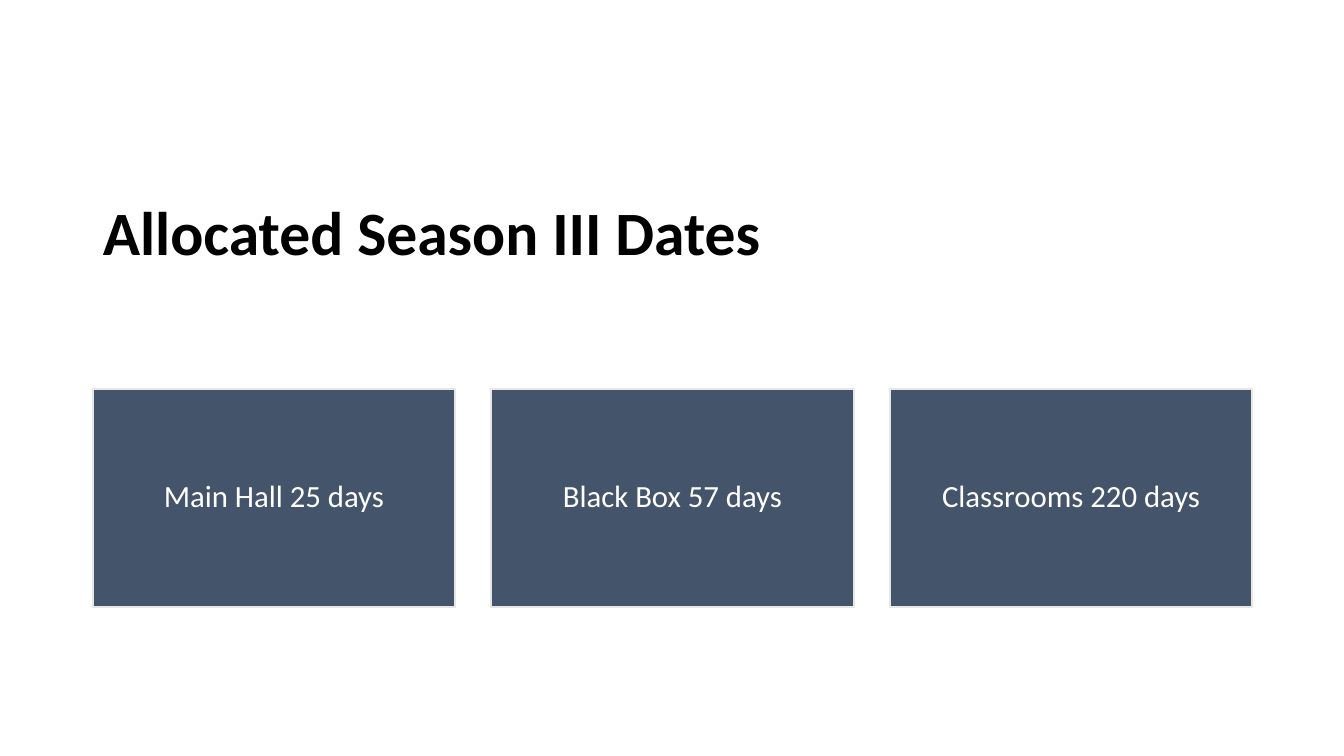
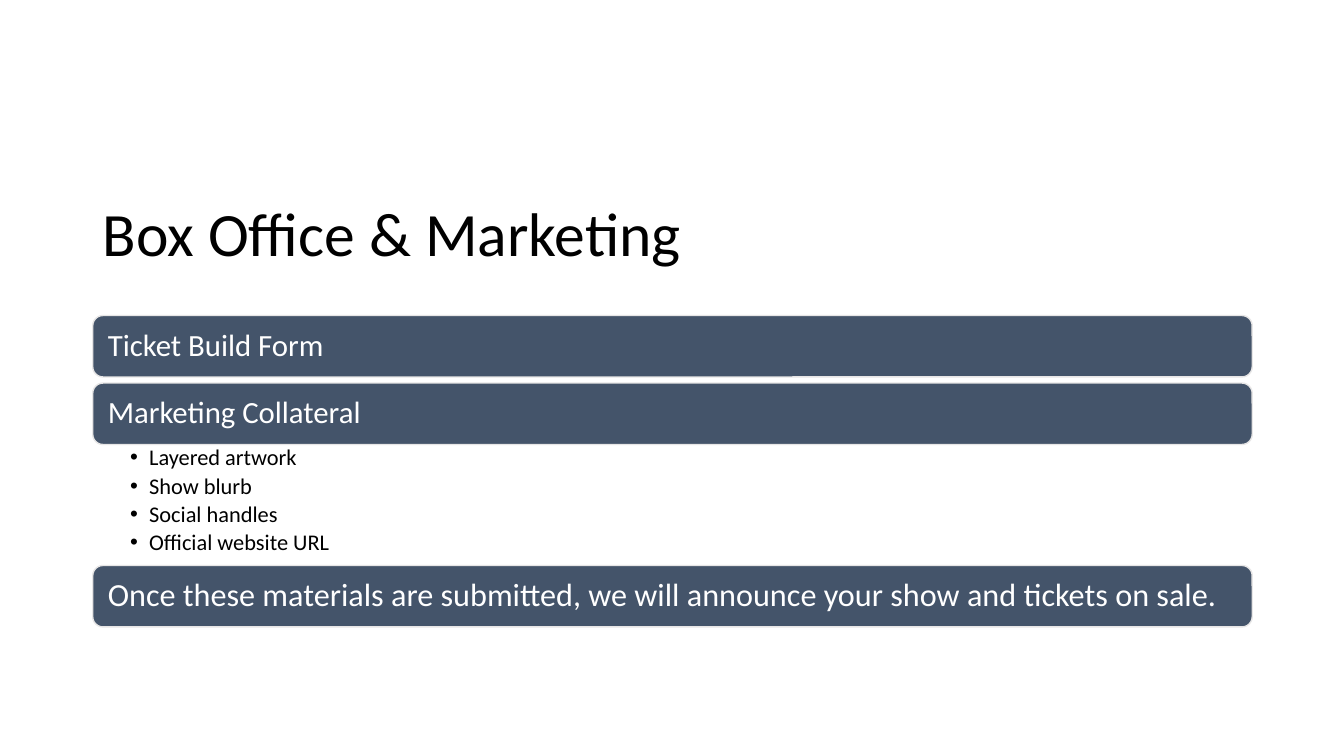
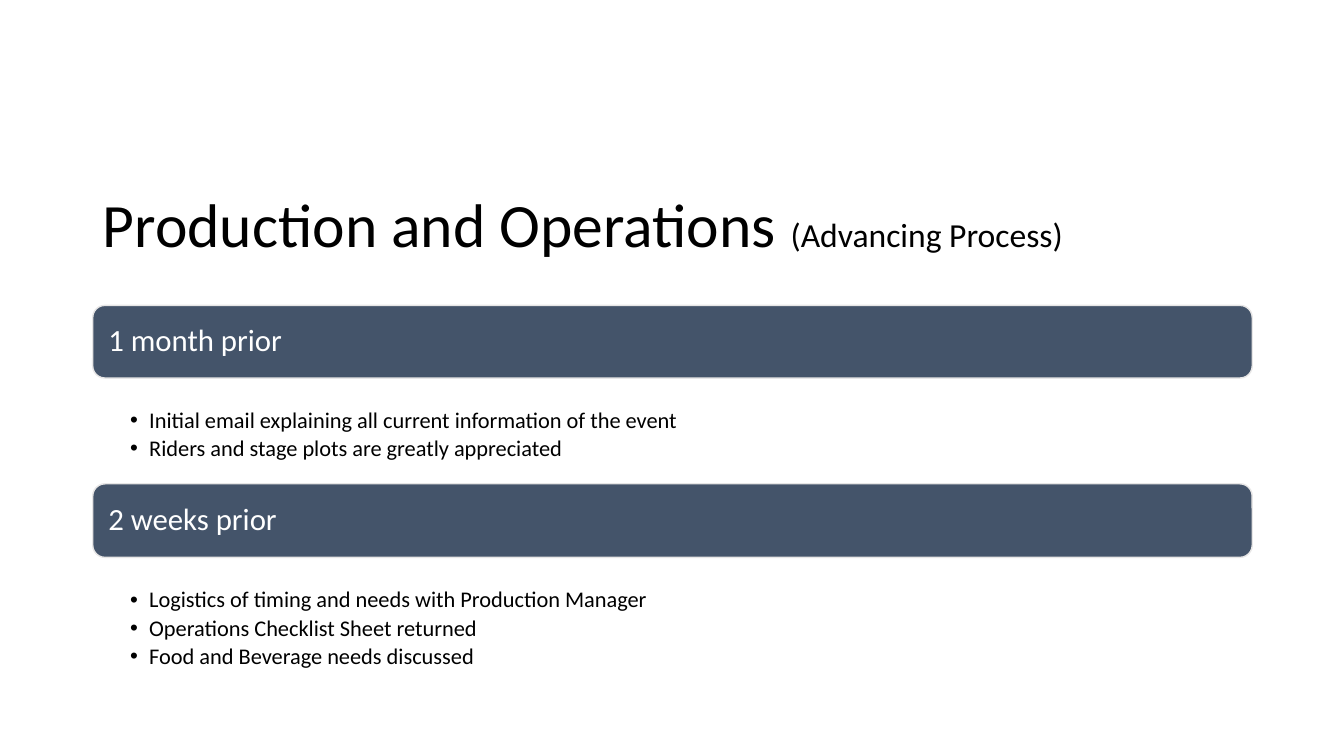
from lxml import etree
from pptx import Presentation
from pptx.dml.color import RGBColor
from pptx.enum.shapes import MSO_SHAPE
from pptx.enum.text import MSO_ANCHOR, MSO_AUTO_SIZE, PP_ALIGN
from pptx.oxml.ns import qn
from pptx.util import Inches, Pt

RECT, ROUND = MSO_SHAPE.RECTANGLE, MSO_SHAPE.ROUNDED_RECTANGLE
TOP, MIDDLE = MSO_ANCHOR.TOP, MSO_ANCHOR.MIDDLE
LEFT, CENTER = PP_ALIGN.LEFT, PP_ALIGN.CENTER
FIXED = MSO_AUTO_SIZE.NONE

SLATE = RGBColor(0x44, 0x54, 0x6A)
PALE = RGBColor(0xE7, 0xE6, 0xE6)
WHITE = RGBColor(0xFF, 0xFF, 0xFF)
BLACK = RGBColor(0, 0, 0)

FONT = "Calibri"
COLS = 12
COL = 11.5 / COLS
ROW = 0.1
EDGE = 0.92


class Deck:
    """Hold the shared style and the current slide."""

    def __init__(self):
        self.deck = Presentation()
        self.deck.slide_width = Inches(13.33)
        self.deck.slide_height = Inches(7.5)

    def place(self, col, row, cols, rows):
        return (Inches(EDGE + col * COL), Inches(row * ROW),
                Inches(cols * COL), Inches(rows * ROW))

    def setup(self, shape, anchor, pads):
        frame = shape.text_frame
        frame.word_wrap = True
        frame.auto_size = FIXED
        frame.vertical_anchor = anchor
        (frame.margin_left, frame.margin_top,
         frame.margin_right, frame.margin_bottom) = map(Inches, pads)
        return frame

    def style(self, para, size, color, align=LEFT, bold=False):
        para.alignment = align
        para.line_spacing = 0.9
        font = para.font
        font.name, font.size, font.bold = FONT, Pt(size), bold
        font.color.rgb = color

    def title(self, text, row, bold=False, tail=""):
        self.slide = self.deck.slides.add_slide(self.deck.slide_layouts[5])
        shape = self.slide.shapes.title
        shape.left, shape.top, shape.width, shape.height = self.place(
            0, row, COLS, 9.6)
        para = self.setup(shape, MIDDLE, (0.1, 0.05, 0.1, 0.05)).paragraphs[0]
        para.text = text
        self.style(para, 44, BLACK, bold=bold)
        if tail:
            run = para.add_run()
            run.text = tail
            run.font.size = Pt(24)

    def block(self, kind, area, text, size, align, edge, pad):
        shape = self.slide.shapes.add_shape(kind, *self.place(*area))
        shape.shadow.inherit = False
        shape.fill.solid()
        shape.fill.fore_color.rgb = SLATE
        shape.line.color.rgb = PALE
        shape.line.width = Pt(edge)
        para = self.setup(shape, MIDDLE, (pad, 0.09, pad, 0.09)).paragraphs[0]
        para.text = text
        self.style(para, size, WHITE, align)

    def cards(self, row, rows, texts):
        gap = 0.1
        cols = COLS / (len(texts) + gap * (len(texts) - 1))
        for i, text in enumerate(texts):
            area = (i * cols * (1 + gap), row, cols, rows)
            self.block(RECT, area, text, 22, CENTER, 1.5, 0.09)

    def bar(self, row, rows, text, size=22):
        self.block(ROUND, (0, row, COLS, rows), text, size, LEFT, 1, 0.12)

    def items(self, row, rows, texts, top=0.02):
        box = self.slide.shapes.add_textbox(*self.place(0, row, COLS, rows))
        frame = self.setup(box, TOP, (0.37, top, 0.12, 0.02))
        for i, text in enumerate(texts):
            para = frame.add_paragraph() if i else frame.paragraphs[0]
            para.text = text
            props = para._p.get_or_add_pPr()
            props.set("marL", str(Inches(0.19)))
            props.set("indent", str(-Inches(0.19)))
            etree.SubElement(props, qn("a:buFont")).set("typeface", "Arial")
            etree.SubElement(props, qn("a:buChar")).set("char", "•")
            para.space_after = Pt(3)
            self.style(para, 16, BLACK)

    def save(self):
        self.deck.save("out.pptx")


def main():
    deck = Deck()

    deck.title("Allocated Season III Dates", 18.6, bold=True)
    deck.cards(38.6, 21.6, ["Main Hall 25 days", "Black Box 57 days",
                            "Classrooms 220 days"])

    deck.title("Box Office & Marketing", 18.7)
    deck.bar(31.3, 6.1, "Ticket Build Form")
    deck.bar(38, 6.1, "Marketing Collateral")
    deck.items(44.1, 12, ["Layered artwork", "Show blurb", "Social handles",
                          "Official website URL"])
    deck.bar(56.1, 6.1, "Once these materials are submitted, we will announce "
             "your show and tickets on sale.", 23)

    deck.title("Production and Operations ", 17.8, tail="(Advancing Process)")
    deck.bar(30.3, 7.2, "1 month prior")
    deck.items(37.5, 10.5, [
        "Initial email explaining all current information of the event",
        "Riders and stage plots are greatly appreciated"], top=0.31)
    deck.bar(48, 7.3, "2 weeks prior")
    deck.items(55.3, 12.1, [
        "Logistics of timing and needs with Production Manager",
        "Operations Checklist Sheet returned",
        "Food and Beverage needs discussed"], top=0.31)

    deck.save()


if __name__ == "__main__":
    main()
